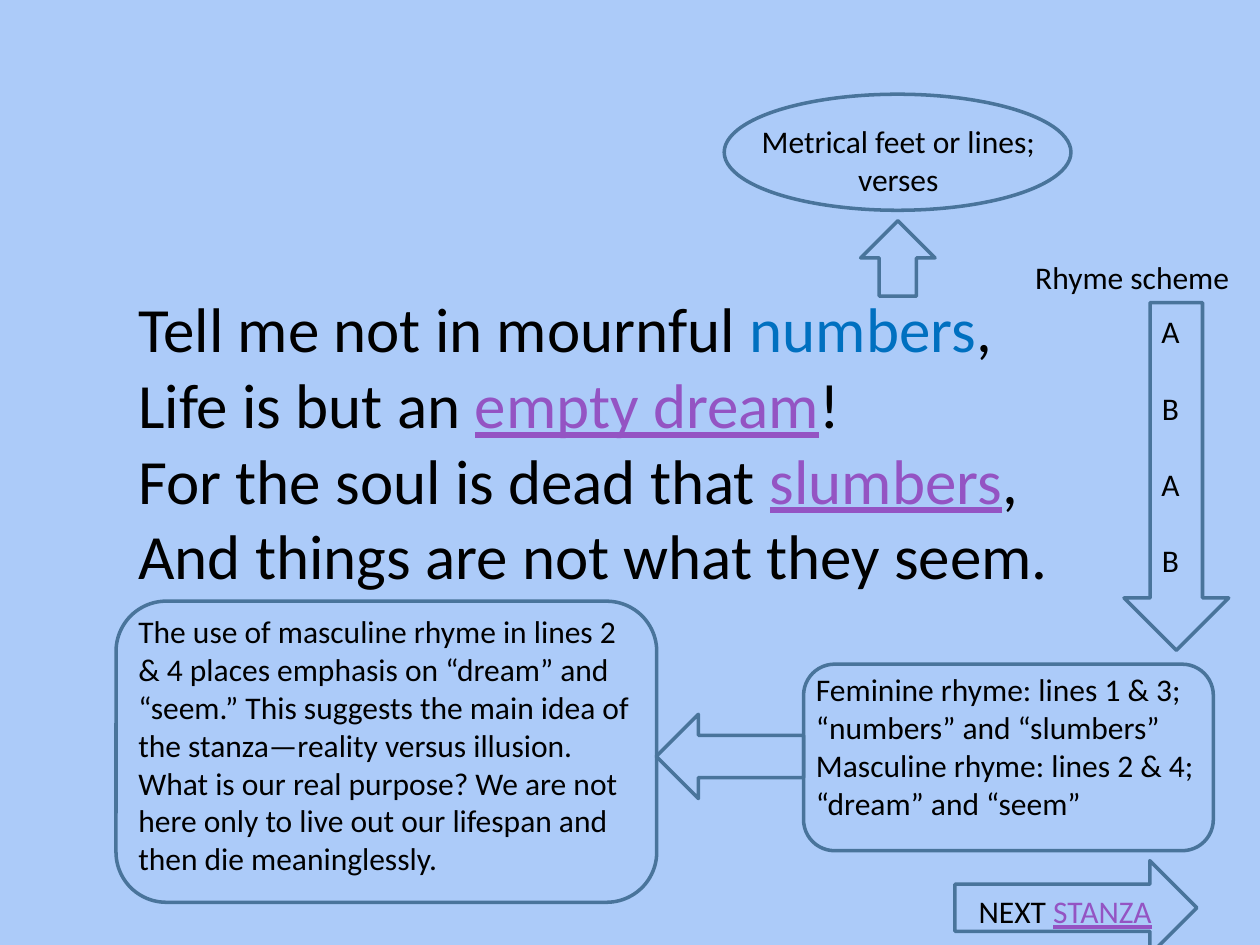
import dataclasses

import pptx
import pptx.dml.color
import pptx.enum.shapes
import pptx.enum.text
import pptx.util

Cm = pptx.util.Cm
Shape = pptx.enum.shapes.MSO_SHAPE
Align = pptx.enum.text.PP_ALIGN


@dataclasses.dataclass(frozen=True)
class Theme:
    font: str = "Calibri"
    background: str = "ACCBF9"
    ink: str = "000000"
    outline: str = "49749B"
    accent: str = "0070C0"
    link: str = "9454C3"
    poem_size: int = 36
    note_size: int = 18
    outline_width: int = 2


def rgb(value):
    return pptx.dml.color.RGBColor.from_string(value)


class PageBuilder:
    def __init__(self, page, theme):
        self.page = page
        self.theme = theme
        fill = page.background.fill
        fill.solid()
        fill.fore_color.rgb = rgb(theme.background)

    def outline(self, kind, left, top, width, height):
        """Add an unfilled preset shape; lengths are in centimetres."""
        shape = self.page.shapes.add_shape(
            kind, Cm(left), Cm(top), Cm(width), Cm(height))
        shape.shadow.inherit = False
        shape.fill.background()
        shape.line.color.rgb = rgb(self.theme.outline)
        shape.line.width = pptx.util.Pt(self.theme.outline_width)

    def span(self, para, text, size, color, underline):
        span = para.add_run()
        span.text = text
        span.font.name = self.theme.font
        span.font.size = pptx.util.Pt(size)
        span.font.color.rgb = rgb(color)
        if underline:
            span.font.underline = True

    def text(self, left, top, width, height, paras, size=None,
             align=Align.LEFT, gap=0, wrap=True):
        """Add paragraphs made of lines, each line a list of (text, color)."""
        box = self.page.shapes.add_textbox(
            Cm(left), Cm(top), Cm(width), Cm(height))
        frame = box.text_frame
        frame.word_wrap = wrap
        frame.auto_size = pptx.enum.text.MSO_AUTO_SIZE.SHAPE_TO_FIT_TEXT
        for index, lines in enumerate(paras):
            para = frame.add_paragraph() if index else frame.paragraphs[0]
            para.alignment = align
            if index and gap:
                para.space_before = pptx.util.Pt(gap)
            for number, line in enumerate(lines):
                if number:
                    para.add_line_break()
                for words, color in line:
                    self.span(para, words, size or self.theme.note_size,
                              color, color == self.theme.link)

    def note(self, left, top, width, height, *texts, **options):
        """Add plain paragraphs in the note size."""
        paras = [[[(words, self.theme.ink)]] for words in texts]
        self.text(left, top, width, height, paras, **options)


def main():
    theme = Theme()
    deck = pptx.Presentation()
    deck.slide_width, deck.slide_height = Cm(25.4), Cm(19.05)
    page = PageBuilder(deck.slides.add_slide(deck.slide_layouts[6]), theme)

    ink, accent, link = theme.ink, theme.accent, theme.link
    stanza = [
        [("Tell me not in mournful ", ink), ("numbers", accent), (",", ink)],
        [("Life is but an ", ink), ("empty dream", link), ("!", ink)],
        [("For the soul is dead that ", ink), ("slumbers", link), (",", ink)],
        [("And things are not what they seem.", ink)],
    ]
    page.text(2.54, 5.72, 19.25, 6.4, [stanza], size=theme.poem_size)

    page.note(22.86, 6.17, 1.47, 5.64, *"ABAB", align=Align.CENTER, gap=22)
    page.note(20.62, 5.08, 4.45, 1.02, "Rhyme scheme", wrap=False)
    page.outline(Shape.DOWN_ARROW, 22.66, 6.1, 2.11, 7.01)

    page.note(14.4, 2.34, 7.42, 1.8, "Metrical feet or lines; verses",
              align=Align.CENTER)
    page.outline(Shape.OVAL, 14.6, 1.9, 6.99, 2.34)
    page.outline(Shape.UP_ARROW, 17.35, 4.45, 1.5, 1.52)

    page.note(16.2, 13.39, 8.99, 3.33,
              "Feminine rhyme: lines 1 & 3; “numbers” and “slumbers”",
              "Masculine rhyme: lines 2 & 4; “dream” and “seem”")
    page.outline(Shape.ROUNDED_RECTANGLE, 16.2, 13.39, 8.26, 3.76)
    page.outline(Shape.LEFT_ARROW, 13.23, 14.4, 2.97, 1.7)

    page.note(2.54, 12.22, 10.69, 5.64,
              "The use of masculine rhyme in lines 2 & 4 places emphasis on "
              "“dream” and “seem.” This suggests the main idea of the "
              "stanza—reality versus illusion.  What is our real purpose? "
              "We are not here only to live out our lifespan and then die "
              "meaninglessly.")
    page.outline(Shape.ROUNDED_RECTANGLE, 2.34, 12.12, 10.9, 6.07)

    page.text(19.48, 17.86, 4.24, 1.02, [[[("NEXT ", ink), ("STANZA", link)]]])
    page.outline(Shape.RIGHT_ARROW, 19.25, 17.35, 4.88, 1.9)

    deck.save("out.pptx")


if __name__ == "__main__":
    main()
